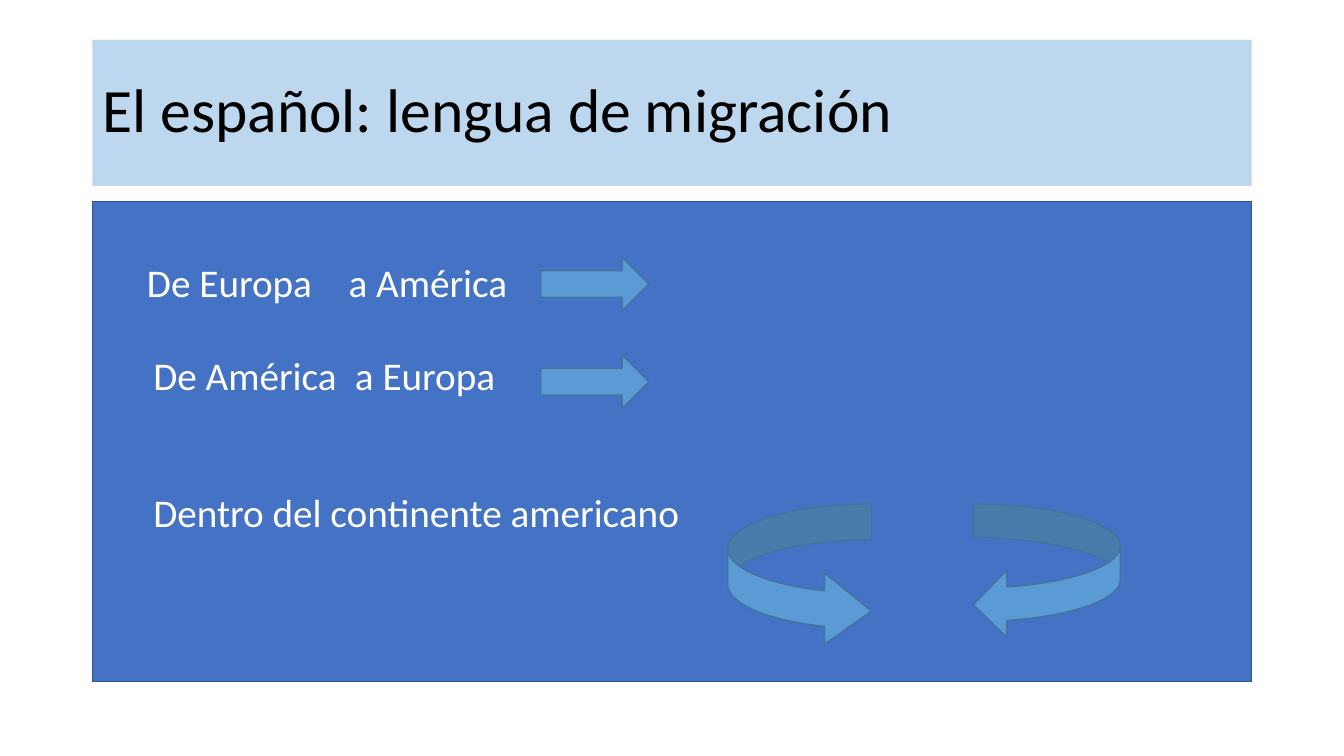
"""Build the slide about Spanish as a language of migration."""
from dataclasses import dataclass

from lxml import etree
from pptx import Presentation
from pptx.dml.color import RGBColor
from pptx.enum.shapes import MSO_SHAPE
from pptx.enum.text import MSO_ANCHOR, MSO_AUTO_SIZE, PP_ALIGN
from pptx.oxml.ns import qn
from pptx.util import Pt

RIGHT_ARROW = MSO_SHAPE.RIGHT_ARROW
CURVED_ARROW = MSO_SHAPE.CURVED_RIGHT_ARROW
LEFT = PP_ALIGN.LEFT
TOP = MSO_ANCHOR.TOP
MIDDLE = MSO_ANCHOR.MIDDLE
NO_AUTOFIT = MSO_AUTO_SIZE.NONE

EMU_PER_PX = 9525
FONT = "Calibri"
LINE_SPACING = 0.9
BLACK = RGBColor(0x00, 0x00, 0x00)
WHITE = RGBColor(0xFF, 0xFF, 0xFF)
PALE_BLUE = RGBColor(0xBD, 0xD7, 0xEE)
PANEL_BLUE = RGBColor(0x44, 0x72, 0xC4)
PANEL_LINE = RGBColor(0x32, 0x54, 0x91)
ARROW_BLUE = RGBColor(0x5B, 0x9B, 0xD5)
ARROW_LINE = RGBColor(0x43, 0x73, 0x9E)


@dataclass(frozen=True)
class Box:
    """Position and size in px."""

    left: int
    top: int
    width: int
    height: int


@dataclass(frozen=True)
class Route:
    """One line of the list, with its indent and tab stop in px."""

    text: str
    level: int = 0
    space_before: float = 0
    indent: int = 0
    tab: int = 0


@dataclass(frozen=True)
class Arrow:
    """One block arrow."""

    kind: MSO_SHAPE
    box: Box
    flipped: bool = False
    adjustments: tuple[float, ...] = ()


TITLE_BOX = Box(88, 38, 1104, 139)
BODY_BOX = Box(88, 192, 1104, 457)
ROUTES = (
    Route("De Europa\ta América", tab=605),
    Route("De América\ta Europa", 1, 36.35, 6, 562),
    Route("Dentro del continente americano", 1, 67.7, 6),
)
ARROWS = (
    Arrow(RIGHT_ARROW, Box(515, 245, 103, 51)),
    Arrow(CURVED_ARROW, Box(927, 480, 140, 128), flipped=True),
    Arrow(RIGHT_ARROW, Box(515, 338, 103, 51)),
    Arrow(CURVED_ARROW, Box(693, 480, 137, 136), adjustments=(0.25, 0.5, 0.33)),
)


def px(length: int) -> int:
    """Turn px into EMU."""
    return length * EMU_PER_PX


def place(shape, box: Box) -> None:
    """Move and size a shape."""
    shape.left, shape.top = px(box.left), px(box.top)
    shape.width, shape.height = px(box.width), px(box.height)


def paint(shape, fill: RGBColor, line: RGBColor) -> None:
    """Give a shape a solid fill and a thin line."""
    shape.fill.solid()
    shape.fill.fore_color.rgb = fill
    shape.line.color.rgb = line
    shape.line.width = Pt(1)


def add_text(paragraph, text: str, size: int, color: RGBColor) -> None:
    """Add one formatted run to a left-aligned paragraph."""
    paragraph.alignment = LEFT
    paragraph.line_spacing = LINE_SPACING
    run = paragraph.add_run()
    run.text = text
    run.font.name = FONT
    run.font.size = Pt(size)
    run.font.color.rgb = color


def draw_title(title) -> None:
    """Format and fill the title placeholder."""
    place(title, TITLE_BOX)
    title.fill.solid()
    title.fill.fore_color.rgb = PALE_BLUE
    title.line.fill.background()
    frame = title.text_frame
    frame.auto_size = NO_AUTOFIT
    frame.vertical_anchor = MIDDLE
    add_text(frame.paragraphs[0], "El español: lengua de migración", 44, BLACK)


def add_route(paragraph, route: Route) -> None:
    """Write one route without a bullet, using its tab stop."""
    paragraph.level = route.level
    paragraph.space_before = Pt(route.space_before)
    properties = paragraph._p.get_or_add_pPr()
    properties.set("marL", str(px(route.indent)))
    properties.set("indent", "0")
    etree.SubElement(properties, qn("a:buNone"))
    if route.tab:
        tabs = etree.SubElement(properties, qn("a:tabLst"))
        etree.SubElement(tabs, qn("a:tab"), pos=str(px(route.tab)), algn="l")
    add_text(paragraph, route.text, 28, WHITE)


def draw_body(body) -> None:
    """Format the body placeholder and list the routes."""
    place(body, BODY_BOX)
    paint(body, PANEL_BLUE, PANEL_LINE)
    frame = body.text_frame
    frame.auto_size = NO_AUTOFIT
    frame.vertical_anchor = TOP
    frame.margin_left, frame.margin_top = px(52), px(59)
    for index, route in enumerate(ROUTES):
        paragraph = frame.add_paragraph() if index else frame.paragraphs[0]
        add_route(paragraph, route)


def draw_arrow(slide, arrow: Arrow) -> None:
    """Draw one block arrow."""
    box = arrow.box
    shape = slide.shapes.add_shape(
        arrow.kind, px(box.left), px(box.top), px(box.width), px(box.height)
    )
    shape.shadow.inherit = False
    paint(shape, ARROW_BLUE, ARROW_LINE)
    for index, value in enumerate(arrow.adjustments):
        shape.adjustments[index] = value
    if arrow.flipped:
        shape.element.spPr.find(qn("a:xfrm")).set("flipH", "1")


def main() -> None:
    """Build and save the presentation."""
    presentation = Presentation()
    presentation.slide_width, presentation.slide_height = px(1280), px(720)
    slide = presentation.slides.add_slide(presentation.slide_layouts[1])
    draw_title(slide.shapes.title)
    draw_body(slide.placeholders[1])
    for arrow in ARROWS:
        draw_arrow(slide, arrow)
    presentation.save("out.pptx")


if __name__ == "__main__":
    main()
